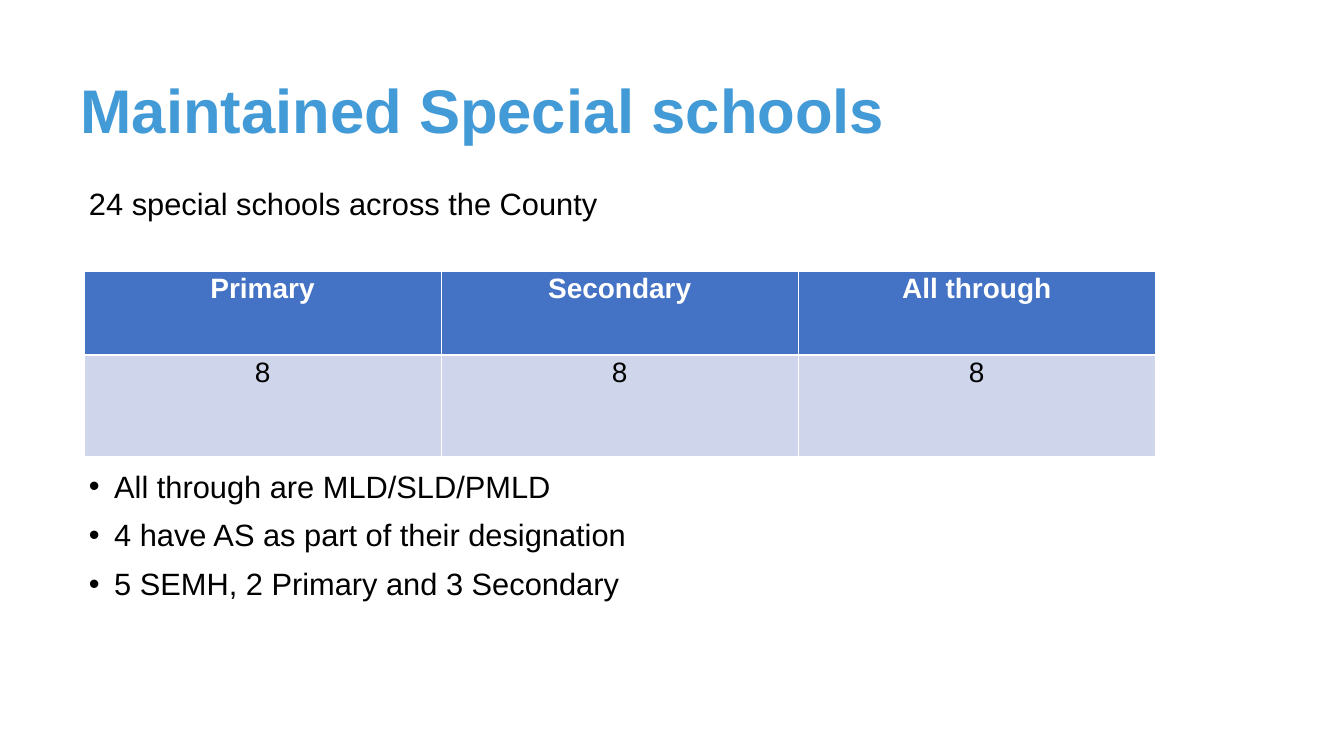
from lxml.etree import SubElement
from pptx import Presentation
from pptx.dml.color import RGBColor
from pptx.enum.text import MSO_ANCHOR, PP_ALIGN
from pptx.oxml.ns import qn
from pptx.util import Pt

TITLE = "Maintained Special schools"
LEAD = "24 special schools across the County"
ROWS = [("Primary", "Secondary", "All through"), ("8", "8", "8")]
NOTES = [
    "All through are MLD/SLD/PMLD",
    "4 have AS as part of their designation",
    "5 SEMH, 2 Primary and 3 Secondary",
]
STYLES = [
    dict(fill="4472C4", color="FFFFFF", bold=True, high=120, top=1, base=3),
    dict(fill="CFD5EA", color="000000", bold=False, high=144, top=3, base=1),
]
LEFT, WIDE = 120, 1680
COL = 510


def paint(tint):
    return RGBColor.from_string(tint)


def write(frame, text, size=44, color="000000", bold=False, align=PP_ALIGN.LEFT,
          line=0.9, gap=0, dot=False, new=False):
    para = frame.add_paragraph() if new else frame.paragraphs[0]
    para.alignment = align
    para.line_spacing = line
    para.space_before = Pt(gap)
    if dot:
        props = para._p.get_or_add_pPr()
        props.set("marL", str(Pt(36)))
        props.set("indent", str(-Pt(36)))
        SubElement(props, qn("a:buFont")).set("typeface", "Arial")
        SubElement(props, qn("a:buChar")).set("char", "•")
    run = para.add_run()
    run.text = text
    font = run.font
    font.name, font.size, font.bold = "Arial", Pt(size), bold
    font.color.rgb = paint(color)


def box(slide, left, top, high, anchor=MSO_ANCHOR.TOP):
    frame = slide.shapes.add_textbox(Pt(left), Pt(top), Pt(WIDE), Pt(high)).text_frame
    frame.word_wrap = True
    frame.vertical_anchor = anchor
    return frame


def edge(cell, top, base):
    props = cell._tc.get_or_add_tcPr()
    sides = [("L", 1), ("R", 1), ("T", top), ("B", base)]
    for spot, (side, size) in enumerate(sides):
        line = SubElement(props, qn("a:ln" + side))
        line.set("w", str(Pt(size)))
        fill = SubElement(line, qn("a:solidFill"))
        SubElement(fill, qn("a:srgbClr")).set("val", "FFFFFF")
        props.insert(spot, line)


def grid(slide, top):
    high = sum(style["high"] for style in STYLES)
    table = slide.shapes.add_table(
        len(ROWS), len(ROWS[0]), Pt(LEFT), Pt(top), Pt(COL * len(ROWS[0])), Pt(high)
    ).table
    for col in table.columns:
        col.width = Pt(COL)
    for row, texts, style in zip(table.rows, ROWS, STYLES):
        row.height = Pt(style["high"])
        for cell, text in zip(row.cells, texts):
            cell.fill.solid()
            cell.fill.fore_color.rgb = paint(style["fill"])
            edge(cell, style["top"], style["base"])
            write(cell.text_frame, text, size=40, color=style["color"],
                  bold=style["bold"], align=PP_ALIGN.CENTER, line=1)


def main():
    deck = Presentation()
    deck.slide_width, deck.slide_height = Pt(1919.52), Pt(1080)
    slide = deck.slides.add_slide(deck.slide_layouts[6])
    head = box(slide, 108, 57.6, 208.8, MSO_ANCHOR.MIDDLE)
    write(head, TITLE, size=88, color="429AD6", bold=True)
    write(box(slide, LEFT, 266.4, 60), LEAD)
    grid(slide, 387.36)
    frame = box(slide, LEFT, 670, 248)
    for spot, note in enumerate(NOTES):
        write(frame, note, gap=22 if spot else 0, dot=True, new=spot > 0)
    deck.save("out.pptx")


if __name__ == "__main__":
    main()
